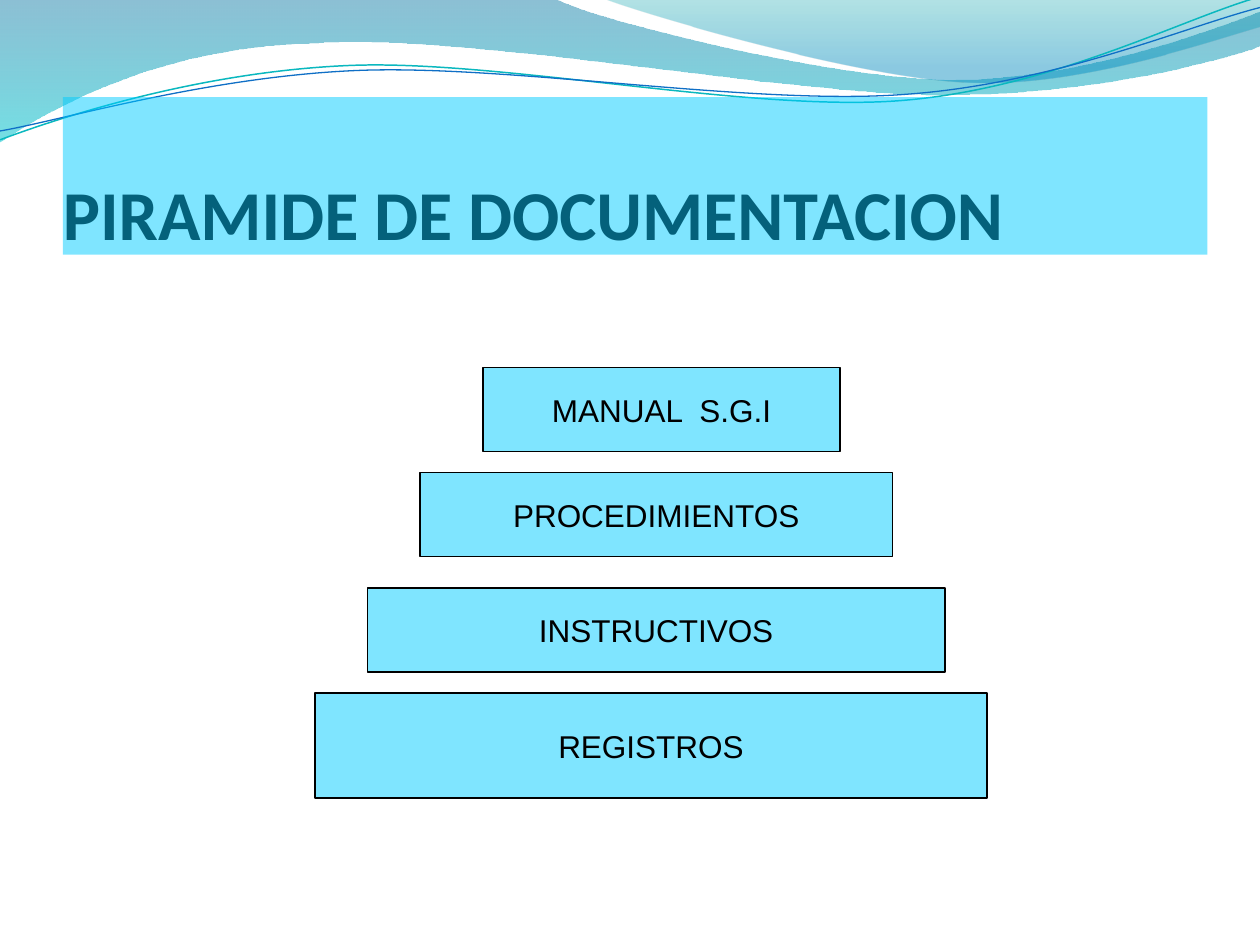
"""Builds the documentation pyramid slide."""
from math import cos, radians, sin

from lxml import etree
from pptx import Presentation
from pptx.dml.color import RGBColor
from pptx.enum.shapes import MSO_SHAPE
from pptx.enum.text import MSO_ANCHOR, PP_ALIGN
from pptx.oxml.ns import qn
from pptx.util import Inches, Pt

RECTANGLE = MSO_SHAPE.RECTANGLE
MIDDLE, BOTTOM = MSO_ANCHOR.MIDDLE, MSO_ANCHOR.BOTTOM
CENTER, LEFT = PP_ALIGN.CENTER, PP_ALIGN.LEFT

WIDTH, HEIGHT = Inches(10), Inches(7.5)
COLUMNS, ROWS = 24, 18
TILT = 2.7

COLORS = {
    "panel": "00CCFF",
    "title": "04617B",
    "ink": "000000",
    "deep": "0074A1",
    "aqua": "00C6CF",
    "teal": "00A1A9",
    "sky": "008BBF",
    "teal_line": "0AB8BF",
    "blue_line": "0F6FC6",
}

# Each wave is a start point, then line ends (1 point) or cubic curves (3 points), in inches.
BANDS = [
    ([[(0, 0)], [(4.4, -0.01)], [(4.76, 0.17), (6.64, 0.63), (7.58, 0.63)],
      [(8.53, 0.63), (9.58, 0.26), (10, 0.09)], [(10.01, 0.36)],
      [(9.83, 0.44), (8.7, 0.76), (7.46, 0.75)], [(6.22, 0.75), (3.82, 0.28), (2.57, 0.34)],
      [(1.29, 0.36), (0.46, 0.83), (-0.01, 1.13)]],
     [(0, "deep", 45), (1, "aqua", 55)]),
    ([[(4.79, -0.01)], [(5.09, 0.11), (6.82, 0.62), (7.69, 0.65)],
      [(8.56, 0.69), (9.61, 0.32), (10, 0.21)], [(10, 0)]],
     [(0, "teal", 30), (0.8, "sky", 45)]),
]
STROKES = [
    ([[(0, 1.11)], [(0.48, 0.93), (1.58, 0.57), (2.77, 0.52)],
      [(3.95, 0.47), (5.93, 0.89), (7.13, 0.8)], [(8.33, 0.71), (9.38, 0.15), (9.98, -0.02)]],
     (4.99, 0.58), "teal_line", 0.85),
    ([[(0, 1.04)], [(0.47, 0.96), (1.64, 0.61), (2.83, 0.56)],
      [(4.03, 0.51), (5.97, 0.84), (7.17, 0.75)], [(8.36, 0.67), (9.41, 0.21), (10, 0.06)]],
     (5, 0.59), "blue_line", 0.75),
]
# Label, then left column, top row, columns wide, rows high.
LEVELS = [
    ("REGISTROS", (6, 13.2, 12.8, 2)),
    ("INSTRUCTIVOS", (7, 11.2, 11, 1.6)),
    ("PROCEDIMIENTOS", (8, 9, 9, 1.6)),
    ("MANUAL  S.G.I", (9.2, 7, 6.8, 1.6)),
]


def color(name):
    """Return a named colour."""
    return RGBColor.from_string(COLORS[name])


def set_opacity(shape, percents):
    """Give each fill colour of a shape its opacity."""
    for node, percent in zip(shape._element.spPr.iter(qn("a:srgbClr")), percents):
        etree.SubElement(node, qn("a:alpha")).set("val", str(percent * 1000))


def turn(point, center):
    """Turn a point clockwise by the tilt around a center."""
    dx, dy = point[0] - center[0], point[1] - center[1]
    c, s = cos(radians(TILT)), sin(radians(TILT))
    return center[0] + dx * c - dy * s, center[1] + dx * s + dy * c


def add_wave(slide, segments, closed):
    """Add the outline of a wave, with its curved segments."""
    segments = [[(Inches(x), Inches(y)) for x, y in segment] for segment in segments]
    start, *ends = [segment[-1] for segment in segments]
    builder = slide.shapes.build_freeform(*start)
    builder.add_line_segments(ends, close=closed)
    wave = builder.convert_to_shape()
    wave.shadow.inherit = False
    lines = list(wave._element.spPr.iter(qn("a:lnTo")))
    for line, segment in zip(lines, segments[1:]):
        if len(segment) == 3:
            line.tag = qn("a:cubicBezTo")
            for index, (x, y) in enumerate(segment[:2]):
                control = etree.Element(qn("a:pt"), x=str(x - wave.left), y=str(y - wave.top))
                line.insert(index, control)
    return wave


def add_band(slide, segments, stops):
    """Add a translucent wave shaded from top to bottom."""
    band = add_wave(slide, segments, True)
    band.fill.gradient()
    band.fill.gradient_angle = 270
    for stop, (position, name, _) in zip(band.fill.gradient_stops, stops):
        stop.position = position
        stop.color.rgb = color(name)
    set_opacity(band, [opacity for _, _, opacity in stops])
    band.line.fill.background()


def add_stroke(slide, segments, center, name, weight):
    """Add a thin tilted wave line."""
    level = [[turn(point, center) for point in segment] for segment in segments]
    stroke = add_wave(slide, level, False)
    stroke.rotation = 360 - TILT
    stroke.fill.background()
    stroke.line.color.rgb = color(name)
    stroke.line.width = Pt(weight)


def add_panel(slide, label, cell, font, size, ink, align, anchor):
    """Add a translucent panel with its label on the grid."""
    left, top, wide, high = cell
    panel = slide.shapes.add_shape(
        RECTANGLE, int(WIDTH * left / COLUMNS), int(HEIGHT * top / ROWS),
        int(WIDTH * wide / COLUMNS), int(HEIGHT * high / ROWS))
    panel.shadow.inherit = False
    panel.fill.solid()
    panel.fill.fore_color.rgb = color("panel")
    set_opacity(panel, [50])
    panel.line.fill.background()
    frame = panel.text_frame
    frame.vertical_anchor = anchor
    paragraph = frame.paragraphs[0]
    paragraph.text = label
    paragraph.alignment = align
    paragraph.font.name = font
    paragraph.font.size = Pt(size)
    paragraph.font.color.rgb = color(ink)
    return panel


def add_title(slide, label):
    """Add the title panel."""
    title = add_panel(slide, label, (1.2, 1.85, 21.8, 3), "Calibri", 40, "title", LEFT, BOTTOM)
    frame = title.text_frame
    frame.word_wrap = True
    frame.margin_left = frame.margin_right = frame.margin_bottom = 0
    frame.paragraphs[0].font.bold = True


def add_level(slide, label, cell):
    """Add one outlined level of the pyramid."""
    level = add_panel(slide, label, cell, "Arial", 18, "ink", CENTER, MIDDLE)
    level.text_frame.word_wrap = False
    level.line.color.rgb = color("ink")
    level.line.width = Pt(0.75)


def main():
    """Build and save the slide."""
    deck = Presentation()
    deck.slide_width, deck.slide_height = WIDTH, HEIGHT
    slide = deck.slides.add_slide(deck.slide_layouts[6])
    for segments, stops in BANDS:
        add_band(slide, segments, stops)
    for segments, center, name, weight in STROKES:
        add_stroke(slide, segments, center, name, weight)
    add_title(slide, "PIRAMIDE DE DOCUMENTACION")
    for label, cell in LEVELS:
        add_level(slide, label, cell)
    deck.save("out.pptx")


if __name__ == "__main__":
    main()
